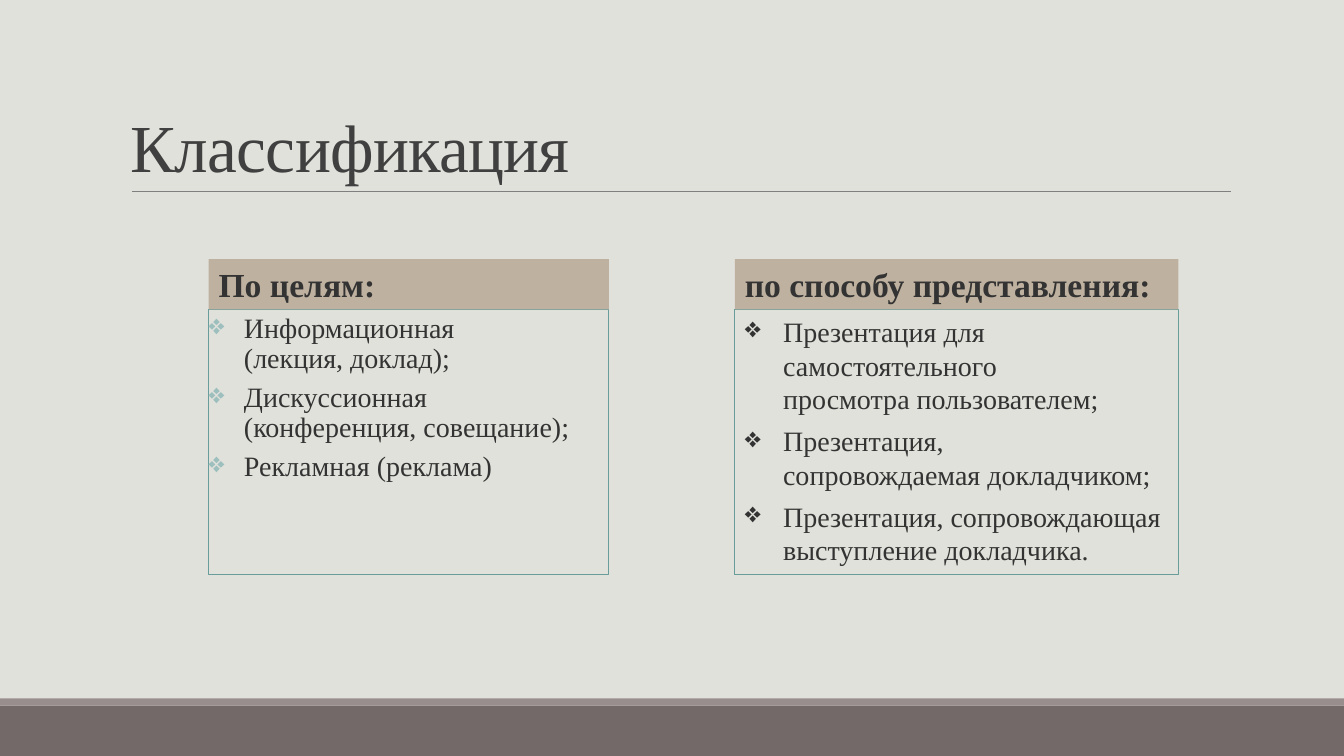
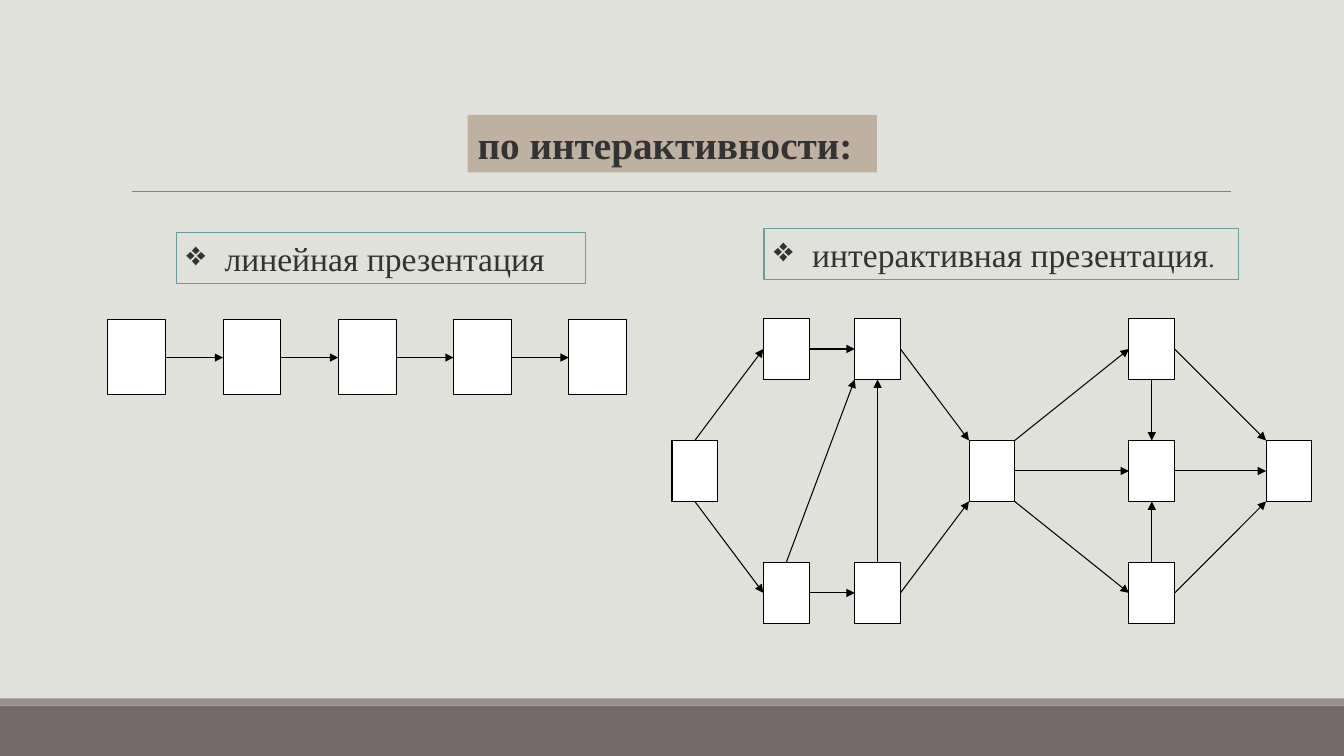
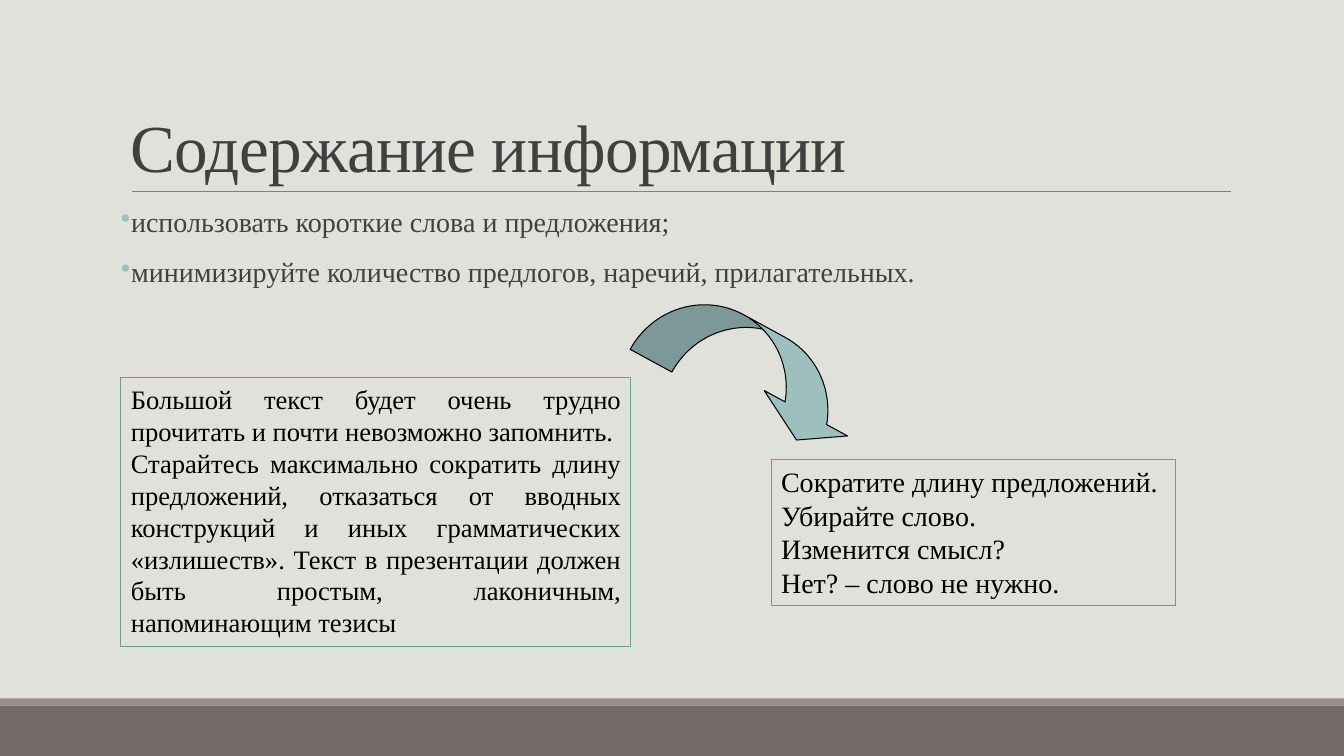
from lxml.etree import SubElement
from pptx import Presentation
from pptx.dml.color import RGBColor
from pptx.enum.shapes import MSO_CONNECTOR, MSO_SHAPE
from pptx.enum.text import MSO_ANCHOR, PP_ALIGN
from pptx.oxml.ns import qn
from pptx.util import Inches, Pt

FACE = "Times New Roman"
PAPER, BAND, STRIP, RULE = "E1E1DB", "746969", "998E8E", "808080"
SAND, TEAL, MINT = "BFB19F", "689D9B", "9DBFBE"
INK, HEAD, BLACK, WHITE = "333333", "404040", "000000", "FFFFFF"

rgb = RGBColor.from_string
deck = Presentation()
deck.slide_width, deck.slide_height = Inches(13.33), Inches(7.5)
COL, ROW = deck.slide_width / 40, deck.slide_height / 30


def box(page, x, y, w, h, fill=None, edge=None, kind=MSO_SHAPE.RECTANGLE):
    item = page.shapes.add_shape(
        kind, int(x * COL), int(y * ROW), int(w * COL), int(h * ROW))
    item.shadow.inherit = False
    if fill:
        item.fill.solid()
        item.fill.fore_color.rgb = rgb(fill)
    else:
        item.fill.background()
    if edge:
        item.line.color.rgb = rgb(edge)
        item.line.width = Pt(0.75)
    else:
        item.line.fill.background()
    return item


def write(item, lines, size, tone=INK, bold=False, mark=None, dot=INK, dent=1.14,
          lead=1, after=0, before=0, align=PP_ALIGN.LEFT):
    frame = item.text_frame
    frame.word_wrap = True
    frame.vertical_anchor = MSO_ANCHOR.TOP
    for i, line in enumerate(lines):
        para = frame.add_paragraph() if i else frame.paragraphs[0]
        para.text = line
        if mark:
            props = para._p.get_or_add_pPr()
            props.set("marL", str(int(dent * COL)))
            props.set("indent", str(-int(dent * COL)))
            SubElement(SubElement(props, qn("a:buClr")), qn("a:srgbClr")).set("val", dot)
            SubElement(props, qn("a:buChar")).set("char", mark)
        para.alignment = align
        para.line_spacing = lead
        para.space_after = Pt(after)
        para.space_before = Pt(before if i else 0)
        for run in para.runs:
            run.font.name = FACE
            run.font.size = Pt(size)
            run.font.bold = bold
            run.font.color.rgb = rgb(tone)
    return frame


pages, wires = [], []
for title in ("Классификация", None, "Содержание информации"):
    page = deck.slides.add_slide(deck.slide_layouts[6])
    page.background.fill.solid()
    page.background.fill.fore_color.rgb = rgb(PAPER)
    box(page, 0, 28, 40, 2, BAND)
    box(page, 0, 27.72, 40, 0.28, STRIP)
    wires.append((page, 3.93, 7.6, 36.63, 7.6, RULE))
    if title:
        frame = write(box(page, 3.6, 1.24, 33, 6.36), [title], 48, HEAD, lead=0.85)
        frame.vertical_anchor = MSO_ANCHOR.BOTTOM
        frame.paragraphs[0].runs[0].font._element.set("spc", "-50")
    pages.append(page)
kinds, links, content = pages

aims = box(kinds, 6.21, 12.28, 11.91, 10.52, edge=TEAL)
frame = write(aims, [
    "Информационная\n(лекция, доклад);",
    "Дискуссионная\n(конференция, совещание);",
    "Рекламная (реклама)",
], 20, mark="❖", dot=MINT, dent=1.05, lead=0.9, after=6)
frame.margin_left = frame.margin_right = 0
ways = box(kinds, 21.87, 12.28, 13.2, 10.52, edge=TEAL)
write(ways, [
    "Презентация для самостоятельного\nпросмотра пользователем;",
    "Презентация,\nсопровождаемая докладчиком;",
    "Презентация, сопровождающая\nвыступление докладчика.",
], 20, mark="❖", after=6)
for x, w, name in ((6.21, 11.91, "По целям:"), (21.87, 13.2, "по способу представления:")):
    write(box(kinds, x, 10.28, w, 2, SAND), [name], 24, bold=True)

write(box(links, 13.92, 4.56, 12.18, 2.28, SAND), ["по интерактивности:"], 28, bold=True)
write(box(links, 5.25, 9.24, 12.18, 2, edge=TEAL), ["линейная презентация"], 24, mark="❖")
frame = write(box(links, 22.74, 9.08, 14.13, 2, edge=TEAL),
              ["интерактивная презентация"], 24, mark="❖")
stop = frame.paragraphs[0].add_run()
stop.text = "."
stop.font.name, stop.font.size = FACE, Pt(18)
stop.font.color.rgb = rgb(INK)

STEP, SIDE = 3.43, 1.72
for i in range(5):
    x = 3.21 + i * STEP
    box(links, x, 12.68, SIDE, 2.98, WHITE, BLACK)
    if i < 4:
        wires.append((links, x + SIDE, 14.19, x + STEP, 14.19, BLACK))

LEFT, TOP, WIDE, TALL = 20, 12.64, 1.36, 2.42
nodes = [(0, 2), (2, 0), (2, 4), (4, 0), (4, 4), (6.5, 2),
         (10, 0), (10, 2), (10, 4), (13, 2)]
for x, y in nodes:
    box(links, LEFT + x * WIDE, TOP + y * TALL, WIDE, TALL, WHITE, BLACK)
paths = [
    (0.5, 2, 2, 0.5), (0.5, 3, 2, 4.5), (3, 0.5, 4, 0.5), (3, 4.5, 4, 4.5),
    (2.5, 4, 4, 1), (4.5, 4, 4.5, 1), (5, 0.5, 6.5, 2), (5, 4.5, 6.5, 3),
    (7.5, 2, 10, 0.5), (7.5, 3, 10, 4.5), (7.5, 2.5, 10, 2.5),
    (11, 0.5, 13, 2), (11, 4.5, 13, 3), (11, 2.5, 13, 2.5),
    (10.5, 1, 10.5, 2), (10.5, 4, 10.5, 3),
]
for a, b, c, d in paths:
    wires.append((links, LEFT + a * WIDE, TOP + b * TALL,
                  LEFT + c * WIDE, TOP + d * TALL, BLACK))

for page, a, b, c, d, tone in wires:
    wire = page.shapes.add_connector(
        MSO_CONNECTOR.STRAIGHT, int(a * COL), int(b * ROW), int(c * COL), int(d * ROW))
    wire.line.color.rgb = rgb(tone)
    wire.line.width = Pt(0.5 if tone == RULE else 0.75)
    if tone == BLACK:
        SubElement(wire.line._get_or_add_ln(), qn("a:tailEnd")).set("type", "triangle")
    SubElement(wire._element.spPr, qn("a:effectLst"))

frame = write(box(content, 3.6, 8.08, 33, 3.8), [
    "использовать короткие слова и предложения;",
    "минимизируйте количество предлогов, наречий, прилагательных.",
], 20, HEAD, mark="•", dot=MINT, dent=0.3, lead=0.9, after=2, before=12)
frame.margin_left = frame.margin_right = 0
write(box(content, 3.6, 15, 15.18, 10.64, edge=TEAL), [
    "Большой текст будет очень трудно прочитать и почти невозможно запомнить.",
    "Старайтесь максимально сократить длину предложений, отказаться от вводных "
    "конструкций и иных грамматических «излишеств». Текст в презентации должен "
    "быть простым, лаконичным, напоминающим тезисы",
], 19, BLACK, align=PP_ALIGN.JUSTIFY)
write(box(content, 22.95, 18.24, 12.03, 5.8, edge=TEAL), [
    "Сократите длину предложений.",
    "Убирайте слово.",
    "Изменится смысл?",
    "Нет? – слово не нужно.",
], 20, BLACK)
curve = box(content, 18.93, 12.96, 7.05, 3.36, MINT, BLACK, MSO_SHAPE.CURVED_DOWN_ARROW)
curve.rotation = 28.6
for i, bend in enumerate((0.56, 1.12, 0.33)):
    curve.adjustments[i] = bend

deck.save("out.pptx")
